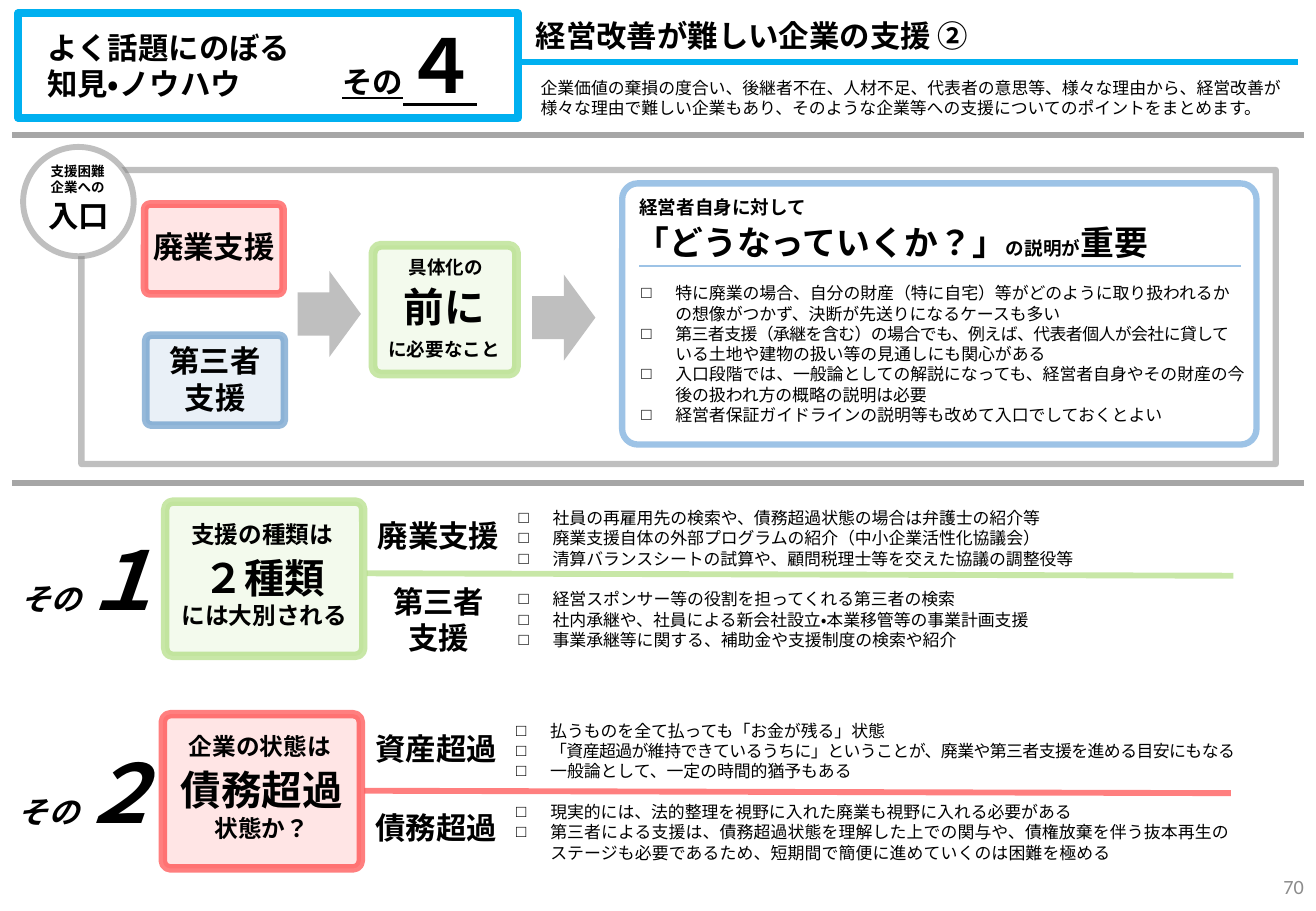
"""Build a one-page slide on supporting companies that are hard to turn around."""
from lxml.etree import SubElement
from pptx import Presentation
from pptx.dml.color import RGBColor
from pptx.enum.lang import MSO_LANGUAGE_ID
from pptx.enum.shapes import MSO_CONNECTOR, MSO_SHAPE
from pptx.enum.text import MSO_ANCHOR, MSO_AUTO_SIZE, PP_ALIGN
from pptx.oxml.ns import qn
from pptx.util import Inches, Pt

RED, BLUE, GREEN, GREY = "FF0000", "2E75B6", "92D050", "808080"
SKY, PALE_BLUE, RULE_GREY, BLACK = "00B0F0", "9DC3E6", "A6A6A6", "000000"
CENTER, LEFT, RIGHT = PP_ALIGN.CENTER, PP_ALIGN.LEFT, PP_ALIGN.RIGHT


def color(hex_text):
    """Return the colour for a hex string."""
    return RGBColor.from_string(hex_text)


def fade(parent, opacity):
    """Give the solid fill directly under the parent an opacity in percent."""
    tint = parent.find(qn("a:solidFill")).find(qn("a:srgbClr"))
    SubElement(tint, qn("a:alpha")).set("val", str(opacity * 1000))


class SlideBuilder:
    """Hold the text style and the current page."""

    def __init__(self, page):
        """Start on the given page."""
        self.page = page
        self.style = {"name": "Arial", "bold": True, "language_id": MSO_LANGUAGE_ID.JAPANESE}

    def box(self, area, kind=MSO_SHAPE.RECTANGLE, fill=None, fill_opacity=100,
            line=None, weight=0, line_opacity=100, corner=None):
        """Draw a preset shape without shadow."""
        box = self.page.shapes.add_shape(kind, *map(Inches, area))
        box.shadow.inherit = False
        if corner is not None:
            box.adjustments[0] = corner
        if fill:
            box.fill.solid()
            box.fill.fore_color.rgb = color(fill)
            if fill_opacity < 100:
                fade(box._element.spPr, fill_opacity)
        else:
            box.fill.background()
        if line:
            self.outline(box, line, weight, line_opacity)
        else:
            box.line.fill.background()

    def tinted_box(self, area, tint, weight, corner=0.06):
        """Draw a rounded box with a light fill and a half-clear border."""
        self.box(area, MSO_SHAPE.ROUNDED_RECTANGLE, tint, 10, tint, weight, 50, corner)

    def outline(self, shape, tint, weight, opacity):
        """Set line colour, width and opacity."""
        shape.line.color.rgb = color(tint)
        shape.line.width = Pt(weight)
        if opacity < 100:
            fade(shape.line._get_or_add_ln(), opacity)

    def rule(self, start, end, tint, weight, opacity=100):
        """Draw a straight line between two points."""
        rule = self.page.shapes.add_connector(MSO_CONNECTOR.STRAIGHT, *map(Inches, start + end))
        self.outline(rule, tint, weight, opacity)
        SubElement(rule._element.spPr, qn("a:effectLst"))

    def set_text(self, box, lines, size, align=LEFT, anchor=MSO_ANCHOR.TOP, tint=BLACK, **style):
        """Fill a box with paragraphs, each a string or a list of (text, style) spans."""
        frame = box.text_frame
        settings = {"word_wrap": True, "auto_size": MSO_AUTO_SIZE.NONE, "vertical_anchor": anchor}
        for name, value in settings.items():
            setattr(frame, name, value)
        for index, line in enumerate(lines):
            para = frame.add_paragraph() if index else frame.paragraphs[0]
            para.alignment = align
            for text, extra in [(line, {})] if isinstance(line, str) else line:
                span = para.add_run()
                span.text = text
                values = {**self.style, "size": size, **style, **extra}
                spacing = values.pop("spacing", 0)
                values["size"] = Pt(values["size"])
                for name, value in values.items():
                    setattr(span.font, name, value)
                span.font.color.rgb = color(tint)
                if spacing:
                    span._r.get_or_add_rPr().set("spc", str(round(spacing * 100)))
        return frame

    def text(self, area, lines, size, align=CENTER, **style):
        """Add a text box."""
        box = self.page.shapes.add_textbox(*map(Inches, area))
        return self.set_text(box, lines, size, align, **style)

    def title(self, area, words, size):
        """Place and format the title placeholder."""
        title = self.page.shapes.title
        title.left, title.top, title.width, title.height = map(Inches, area)
        self.set_text(title, [words], size)

    def checklist(self, area, items):
        """Add a text box whose paragraphs have square bullets."""
        frame = self.text(area, items, 10, LEFT, bold=False)
        for para in frame.paragraphs:
            layout = para._p.get_or_add_pPr()
            layout.set("marL", str(Inches(0.28)))
            layout.set("indent", str(-Inches(0.28)))
            SubElement(layout, qn("a:buFont")).set("typeface", "Arial")
            SubElement(layout, qn("a:buChar")).set("char", "□")


def draw_header(builder):
    """Draw the topic box, title and lead text."""
    builder.box((0.15, 0.11, 4.11, 0.86), line=SKY, weight=4.75)
    builder.text((0.29, 0.19, 2.68, 0.71), ["よく話題にのぼる", "知見・ノウハウ"], 18, LEFT)
    builder.text((2.72, 0.11, 1.75, 0.84), [[("その", {}), ("４", {"size": 44})]], 18, LEFT,
                 underline=True)
    builder.rule((4.25, 0.51), (10.68, 0.51), SKY, 3.5)
    builder.title((4.31, 0.09, 6.36, 0.4), "経営改善が難しい企業の支援 ②", 18)
    builder.text((4.35, 0.59, 6.35, 0.44), [
        "企業価値の棄損の度合い、後継者不在、人材不足、代表者の意思等、様々な理由から、経営改善が"
        "様々な理由で難しい企業もあり、そのような企業等への支援についてのポイントをまとめます。",
    ], 10, LEFT, name="Calibri", bold=False)
    for top in (1.11, 3.98):
        builder.rule((0.1, top), (10.73, top), RULE_GREY, 3.5)


def draw_entrance(builder):
    """Draw the flow from the two support types to the explanation panel."""
    builder.box((0.67, 1.4, 9.83, 2.42), line=GREY, weight=3.75, line_opacity=50)
    builder.box((0.19, 1.21, 0.91, 0.9), MSO_SHAPE.OVAL, "FFFFFF",
                line=GREY, weight=3.5, line_opacity=50)
    builder.text((0.14, 1.29, 1, 0.38), ["支援困難", "企業への"], 8)
    builder.text((0.15, 1.57, 1, 0.42), ["入口"], 18)
    builder.tinted_box((1.19, 1.68, 1.14, 0.74), RED, 4.5)
    builder.text((1.11, 1.83, 1.3, 0.4), ["廃業支援"], 18)
    builder.tinted_box((1.2, 2.76, 1.14, 0.74), BLUE, 4.5)
    builder.text((1.12, 2.77, 1.3, 0.71), ["第三者", "支援"], 18)
    builder.tinted_box((3.07, 2.02, 1.18, 1.06), GREEN, 5.25)
    builder.text((2.47, 2.06, 2.4, 0.29), ["具体化の"], 11)
    builder.text((2.98, 2.27, 1.35, 0.5), ["前に"], 24)
    builder.text((3.03, 2.73, 1.25, 0.29), ["に必要なこと"], 11)
    for left, top in ((2.45, 2.23), (4.38, 2.26)):
        builder.box((left, top, 0.52, 0.71), MSO_SHAPE.RIGHT_ARROW, GREY, 50)

    builder.box((5.12, 1.51, 5.22, 2.15), MSO_SHAPE.ROUNDED_RECTANGLE, "FFFFFF",
                line=PALE_BLUE, weight=3.75, corner=0.06)
    builder.text((3.65, 1.56, 4.6, 0.29), ["経営者自身に対して"], 11)
    builder.text((4.96, 1.78, 4.76, 0.44), [
        [("「どうなっていくか？」", {}), ("の説明が", {"size": 11}), ("重要", {})]], 20)
    builder.rule((5.26, 2.19), (10.21, 2.19), PALE_BLUE, 1.25)
    builder.checklist((5.18, 2.28, 5.16, 1.28), [
        "特に廃業の場合、自分の財産（特に自宅）等がどのように取り扱われるかの想像がつかず、決断が先送りになるケースも多い",
        [("第三者支援（承継を含む）の場合でも、例えば、代表者個人が会社に貸して", {"spacing": -0.3}),
         ("いる土地や建物の扱い等の見通しにも関心がある", {})],
        "入口段階では、一般論としての解説になっても、経営者自身やその財産の今後の扱われ方の概略の説明は必要",
        "経営者保証ガイドラインの説明等も改めて入口でしておくとよい",
    ])


def draw_point(builder, left, top, tint, number, opening, main_words, branches, rule_top):
    """Draw one numbered point with its box and two branches."""
    builder.tinted_box((left, top, 1.63, 1.27), tint, 5, 0.05)
    builder.text((left - 1.29, top + 0.18, 1.4, 0.91), [[("その", {}), (number, {"size": 48})]],
                 18, LEFT, italic=True)
    builder.text((left - 0.4, top + 0.1, 2.4, 0.34), [opening], 14)
    builder.text((left - 0.23, top + 0.37, 2.09, 0.74),
                 [[(main_words[0], {"size": 24})], main_words[1]], 14)
    builder.rule((left + 1.66, rule_top), (left + 8.79, rule_top + 0.02), tint, 3.5, 50)
    for (label, label_top, items, width), list_top in zip(branches, (top, top + 0.67)):
        builder.text((left + 1.65, label_top, 1.2, 0.4), label, 18)
        builder.checklist((left + 2.81, list_top, width, 0.61), items)


def main():
    """Build and save the deck."""
    deck = Presentation()
    deck.slide_width, deck.slide_height = Inches(10.83), Inches(7.5)
    builder = SlideBuilder(deck.slides.add_slide(deck.slide_layouts[5]))
    draw_header(builder)
    draw_entrance(builder)
    draw_point(builder, 1.36, 4.13, GREEN, "１", "支援の種類は", ("２種類", "には大別される"), [
        (["廃業支援"], 4.21, ["社員の再雇用先の検索や、債務超過状態の場合は弁護士の紹介等",
                          "廃業支援自体の外部プログラムの紹介（中小企業活性化協議会）",
                          "清算バランスシートの試算や、顧問税理士等を交えた協議の調整役等"], 6.66),
        (["第三者", "支援"], 4.75, ["経営スポンサー等の役割を担ってくれる第三者の検索",
                               "社内承継や、社員による新会社設立・本業移管等の事業計画支援",
                               "事業承継等に関する、補助金や支援制度の検索や紹介"], 6.66)], 4.72)
    draw_point(builder, 1.34, 5.88, RED, "２", "企業の状態は", ("債務超過", "状態か？"), [
        (["資産超過"], 5.96, ["払うものを全て払っても「お金が残る」状態",
                          [("「資産超過が維持できているうちに」ということが、廃業や第三者支援を進める目安にもなる",
                            {"spacing": -0.3})],
                          "一般論として、一定の時間的猶予もある"], 6.66),
        (["債務超過"], 6.61, ["現実的には、法的整理を視野に入れた廃業も視野に入れる必要がある",
                          [("第三者による支援は、債務超過状態を理解した上での関与や、債権放棄を伴う抜本再生の"
                            "ステージも必要であるため、短期間で簡便に進めていくのは困難を極める",
                            {"spacing": 0.1})]], 6.15)], 6.51)
    builder.text((10.3, 7.1, 0.53, 0.4), ["70"], 12, RIGHT, anchor=MSO_ANCHOR.MIDDLE,
                 tint="8C8C8C", name="Calibri", bold=False)
    deck.save("out.pptx")


if __name__ == "__main__":
    main()
